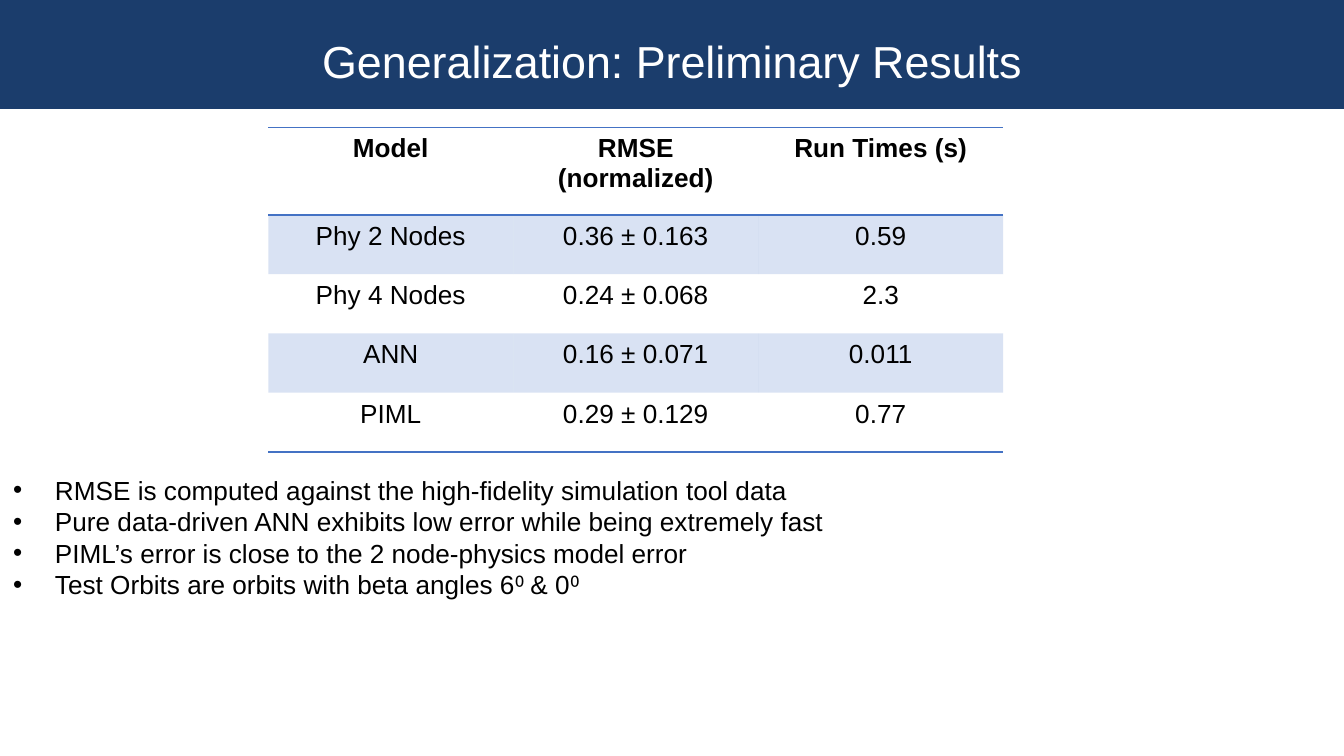
from lxml import etree
from pptx import Presentation
from pptx.dml.color import RGBColor
from pptx.enum.shapes import MSO_SHAPE
from pptx.enum.text import MSO_ANCHOR, MSO_AUTO_SIZE, PP_ALIGN
from pptx.oxml.ns import qn
from pptx.util import Cm, Pt

RECT = MSO_SHAPE.RECTANGLE
MIDDLE = MSO_ANCHOR.MIDDLE
CENTER = PP_ALIGN.CENTER
GROW = MSO_AUTO_SIZE.SHAPE_TO_FIT_TEXT

NAVY, BLUE, BLACK, WHITE = "1B3D6C", "4472C4", "000000", "FFFFFF"
FONT = "Arial"
PLAIN = "{2D5ABB26-0587-4C30-8999-92F81FD0307C}"  # table style without grid

TITLE = "Generalization: Preliminary Results"
ROWS = [
    ("Model", "RMSE (normalized)", "Run Times (s)"),
    ("Phy 2 Nodes", "0.36 ± 0.163", "0.59"),
    ("Phy 4 Nodes", "0.24 ± 0.068", "2.3"),
    ("ANN", "0.16 ± 0.071", "0.011"),
    ("PIML", "0.29 ± 0.129", "0.77"),
]
NOTES = [
    "RMSE is computed against the high-fidelity simulation tool data",
    "Pure data-driven ANN exhibits low error while being extremely fast",
    "PIML’s error is close to the 2 node-physics model error",
    "Test Orbits are orbits with beta angles 6⁰ & 0⁰",
]
WIDTH, HEIGHT = 25.4, 14.29
COL, HEAD, ROW = 4.63, 1.65, 1.12


def color(hex):
    return RGBColor.from_string(hex)


def style(para, size, tint, bold=False):
    font = para.font
    font.name, font.size, font.bold = FONT, Pt(size), bold
    font.color.rgb = color(tint)


def rule(cell, tag):
    """Draw one border of a cell; tag is lnT or lnB."""
    line = etree.SubElement(cell._tc.get_or_add_tcPr(), qn("a:" + tag), w=str(Pt(1)))
    fill = etree.SubElement(line, qn("a:solidFill"))
    etree.SubElement(fill, qn("a:srgbClr"), val=BLUE)


def shade(cell):
    """Fill a cell with blue at 20 % opacity."""
    cell.fill.solid()
    cell.fill.fore_color.rgb = color(BLUE)
    tone = cell._tc.tcPr.find(".//" + qn("a:solidFill") + "/" + qn("a:srgbClr"))
    etree.SubElement(tone, qn("a:alpha"), val="20000")


def bullet(para):
    props = para._p.get_or_add_pPr()
    props.set("marL", str(Cm(0.79)))
    props.set("indent", str(-Cm(0.79)))
    etree.SubElement(props, qn("a:buFont"), typeface=FONT)
    etree.SubElement(props, qn("a:buChar"), char="•")


def add_title(slide):
    bar = slide.shapes.add_shape(RECT, 0, 0, Cm(WIDTH), Cm(2.06))
    bar.shadow.inherit = False
    bar.fill.solid()
    bar.fill.fore_color.rgb = color(NAVY)
    bar.line.fill.background()
    bar.text_frame.vertical_anchor = MIDDLE
    bar.text_frame.margin_bottom = Cm(0.39)
    para = bar.text_frame.paragraphs[0]
    para.text, para.alignment, para.line_spacing = TITLE, CENTER, 1.5
    style(para, 24, WHITE)


def add_results(slide):
    count, last = len(ROWS[0]), len(ROWS) - 1
    frame = slide.shapes.add_table(len(ROWS), count, Cm(5.07), Cm(2.41),
                                   Cm(COL * count), Cm(HEAD + ROW * last))
    table = frame.table
    table._tbl.tblPr.find(qn("a:tableStyleId")).text = PLAIN
    for col in table.columns:
        col.width = Cm(COL)
    for r, row in enumerate(ROWS):
        table.rows[r].height = Cm(ROW if r else HEAD)
        for c, text in enumerate(row):
            cell = table.cell(r, c)
            para = cell.text_frame.paragraphs[0]
            para.text, para.alignment = text, CENTER
            style(para, 14, BLACK, bold=r == 0)
            if r == 0:
                rule(cell, "lnT")
            if r in (0, last):
                rule(cell, "lnB")
            if r % 2:
                shade(cell)
            else:
                cell.fill.background()


def add_notes(slide):
    box = slide.shapes.add_textbox(0, Cm(8.84), Cm(20.8), Cm(2.64))
    frame = box.text_frame
    frame.word_wrap, frame.auto_size = True, GROW
    for i, text in enumerate(NOTES):
        para = frame.add_paragraph() if i else frame.paragraphs[0]
        para.text = text
        bullet(para)
        style(para, 14, BLACK)


def main():
    deck = Presentation()
    deck.slide_width, deck.slide_height = Cm(WIDTH), Cm(HEIGHT)
    slide = deck.slides.add_slide(deck.slide_layouts[6])
    add_title(slide)
    add_results(slide)
    add_notes(slide)
    deck.save("out.pptx")


if __name__ == "__main__":
    main()
